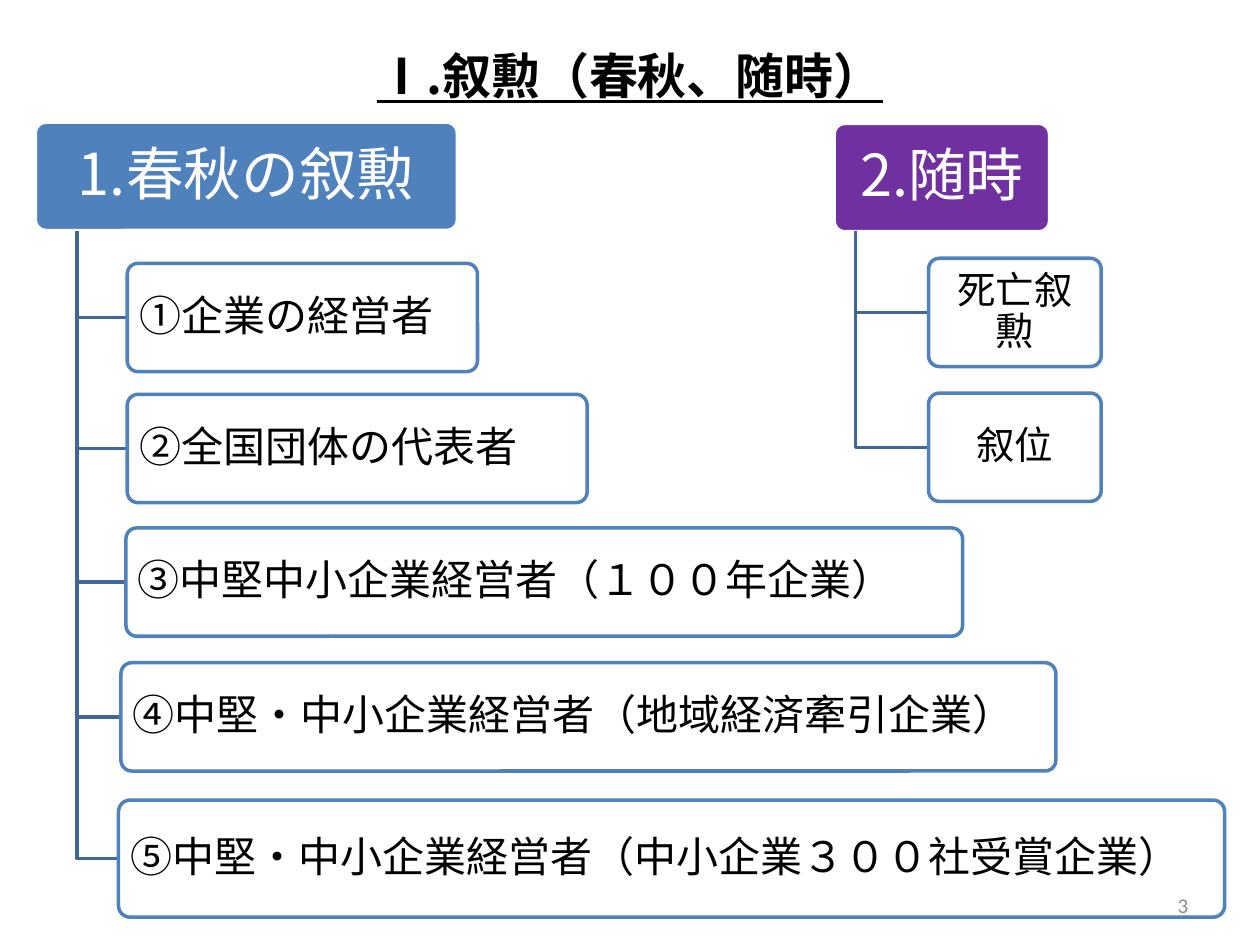
"""Build the slide that outlines the two kinds of conferment as box trees."""
import pptx
import pptx.dml.color
import pptx.enum.shapes
import pptx.enum.text
import pptx.oxml.ns
import pptx.util
from lxml import etree

Inches = pptx.util.Inches
Pt = pptx.util.Pt
RGBColor = pptx.dml.color.RGBColor
Align = pptx.enum.text.PP_ALIGN
Anchor = pptx.enum.text.MSO_ANCHOR

BLUE = RGBColor(0x4F, 0x81, 0xBD)
PURPLE = RGBColor(0x70, 0x30, 0xA0)
BRANCH = RGBColor(0x3F, 0x67, 0x97)
WHITE = RGBColor(0xFF, 0xFF, 0xFF)
BLACK = RGBColor(0, 0, 0)
GREY = RGBColor(0x8C, 0x8C, 0x8C)
JAPANESE = "Noto Sans CJK JP"

TITLE = "Ⅰ.叙勲（春秋、随時）"
PAGE_NUMBER = "3"
HEAD_HEIGHT = 0.86
TRUNK_TOP = 1.83
TREES = [
    {
        "head": ("1.春秋の叙勲", 0.28, 0.97, 3.35), "fill": BLUE, "trunk": 0.61,
        "size": 24, "align": Align.LEFT,
        "items": [
            ("①企業の経営者", 1.01, 2.09, 2.78, 0.86),
            ("②全国団体の代表者", 1.01, 3.13, 3.65, 0.86),
            ("③中堅中小企業経営者（１００年企業）", 1.0, 4.19, 6.64, 0.86),
            ("④中堅・中小企業経営者（地域経済牽引企業）", 0.96, 5.26, 7.42, 0.86),
            ("⑤中堅・中小企業経営者（中小企業３００社受賞企業）", 0.94, 6.35, 8.78, 0.93),
        ],
    },
    {
        "head": ("2.随時", 6.62, 0.98, 1.71), "fill": PURPLE, "trunk": 6.79,
        "size": 22, "align": Align.CENTER,
        "items": [
            ("死亡叙勲", 7.37, 2.05, 1.37, 0.86),
            ("叙位", 7.37, 3.12, 1.37, 0.86),
        ],
    },
]


def write_text(shape, text, font_name, size, color, align, anchor, margins=(0.1, 0.05), **font_format):
    frame = shape.text_frame
    side, edge = (Inches(margin) for margin in margins)
    frame_format = {
        "word_wrap": True, "auto_size": pptx.enum.text.MSO_AUTO_SIZE.NONE, "vertical_anchor": anchor,
        "margin_left": side, "margin_right": side, "margin_top": edge, "margin_bottom": edge,
    }
    for name, value in frame_format.items():
        setattr(frame, name, value)
    paragraph = frame.paragraphs[0]
    paragraph.alignment = align
    run = paragraph.add_run()
    run.text = text
    for name, value in {"name": font_name, "size": Pt(size), **font_format}.items():
        setattr(run.font, name, value)
    run.font.color.rgb = color
    latin = run.font._element.find(pptx.oxml.ns.qn("a:latin"))
    east_asian = etree.Element(pptx.oxml.ns.qn("a:ea"), typeface=font_name)
    latin.addnext(east_asian)
    return paragraph


def add_box(slide, text, left, top, width, height, fill, line, **text_format):
    shape = slide.shapes.add_shape(
        pptx.enum.shapes.MSO_SHAPE.ROUNDED_RECTANGLE, *map(Inches, (left, top, width, height)))
    shape.adjustments[0] = 0.1
    shape.shadow.inherit = False
    shape.fill.solid()
    shape.fill.fore_color.rgb = fill
    shape.line.color.rgb = line
    shape.line.width = Pt(2)
    paragraph = write_text(shape, text, JAPANESE, anchor=Anchor.MIDDLE, **text_format)
    paragraph.line_spacing = 0.9


def add_branch(slide, trunk, box_left, box_middle):
    builder = slide.shapes.build_freeform(Inches(trunk), Inches(TRUNK_TOP))
    corners = [(trunk, box_middle), (box_left, box_middle)]
    builder.add_line_segments([(Inches(x), Inches(y)) for x, y in corners], close=False)
    branch = builder.convert_to_shape()
    branch.shadow.inherit = False
    branch.fill.background()
    branch.line.color.rgb = BRANCH
    branch.line.width = Pt(2)


def add_tree(slide, tree):
    add_box(slide, *tree["head"], HEAD_HEIGHT, tree["fill"], WHITE,
            size=33, color=WHITE, align=Align.CENTER, margins=(0.09, 0.07))
    for text, left, top, width, height in tree["items"]:
        add_branch(slide, tree["trunk"], left, top + height / 2)
        add_box(slide, text, left, top, width, height, WHITE, BLUE,
                size=tree["size"], color=BLACK, align=tree["align"], margins=(0.07, 0.05))


def main():
    presentation = pptx.Presentation()
    presentation.slide_width, presentation.slide_height = Inches(10), Inches(7.5)
    slide = presentation.slides.add_slide(presentation.slide_layouts[5])
    for tree in TREES:
        add_tree(slide, tree)
    number = slide.shapes.add_textbox(*map(Inches, (7.2, 6.98, 2.33, 0.4)))
    write_text(number, PAGE_NUMBER, "Calibri", 12, GREY, Align.RIGHT, Anchor.MIDDLE)
    title = slide.shapes.title
    place = {"left": 0, "top": 0.31, "width": 10, "height": 0.57}
    for name, value in place.items():
        setattr(title, name, Inches(value))
    paragraph = write_text(title, TITLE, JAPANESE, 28, BLACK, Align.CENTER, Anchor.TOP,
                           bold=True, underline=True)
    paragraph.space_before = Pt(5.6)
    presentation.save("out.pptx")


if __name__ == "__main__":
    main()
